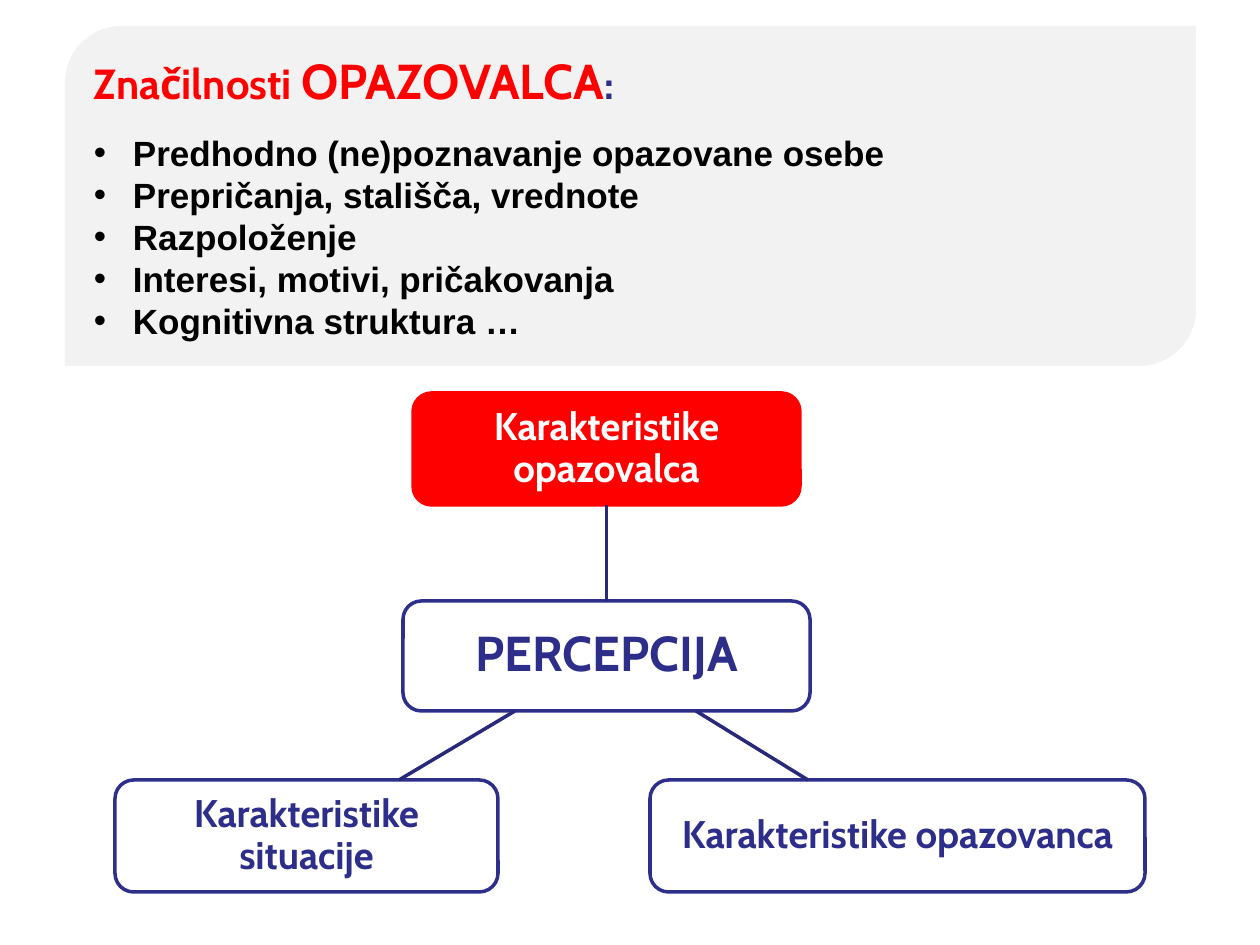
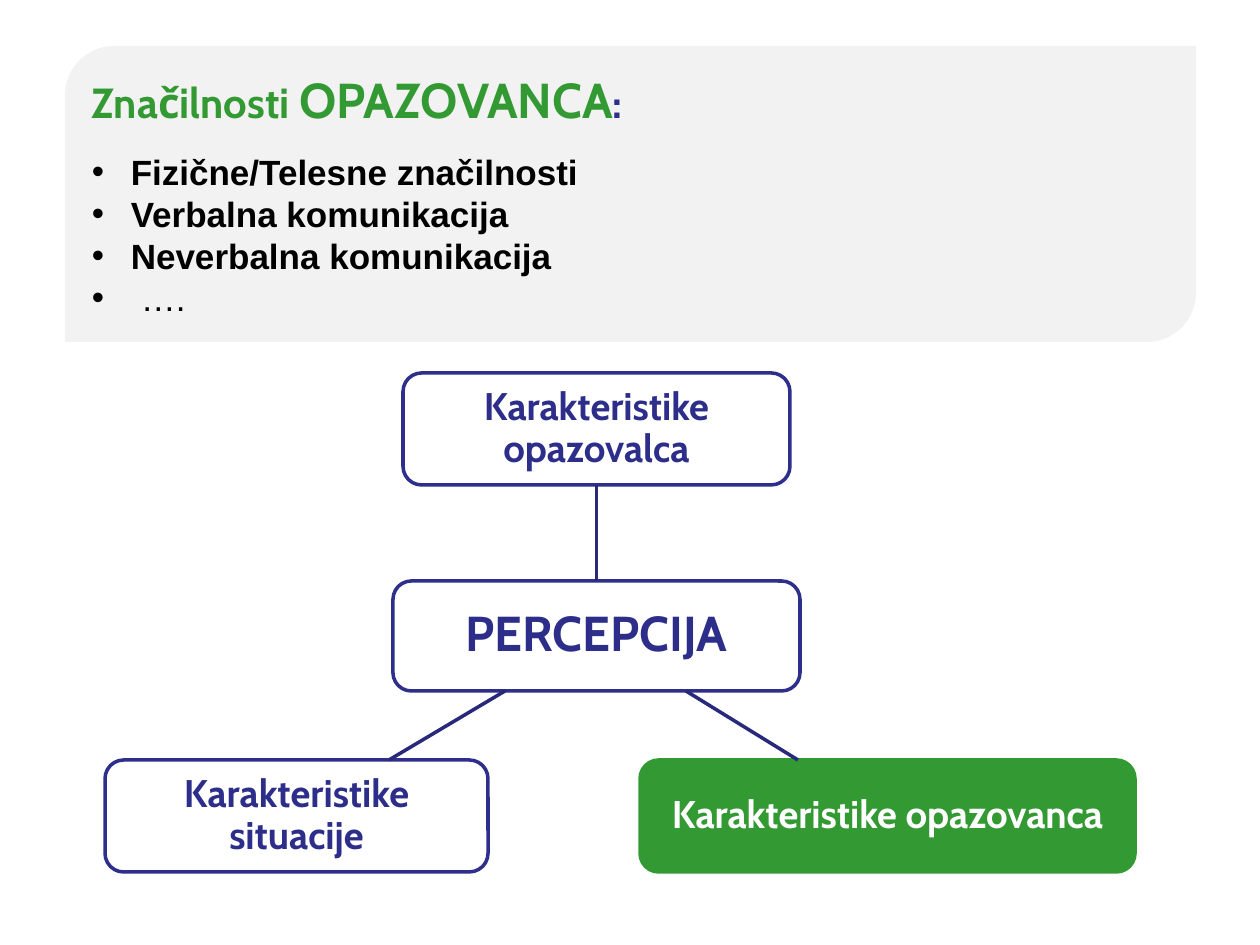
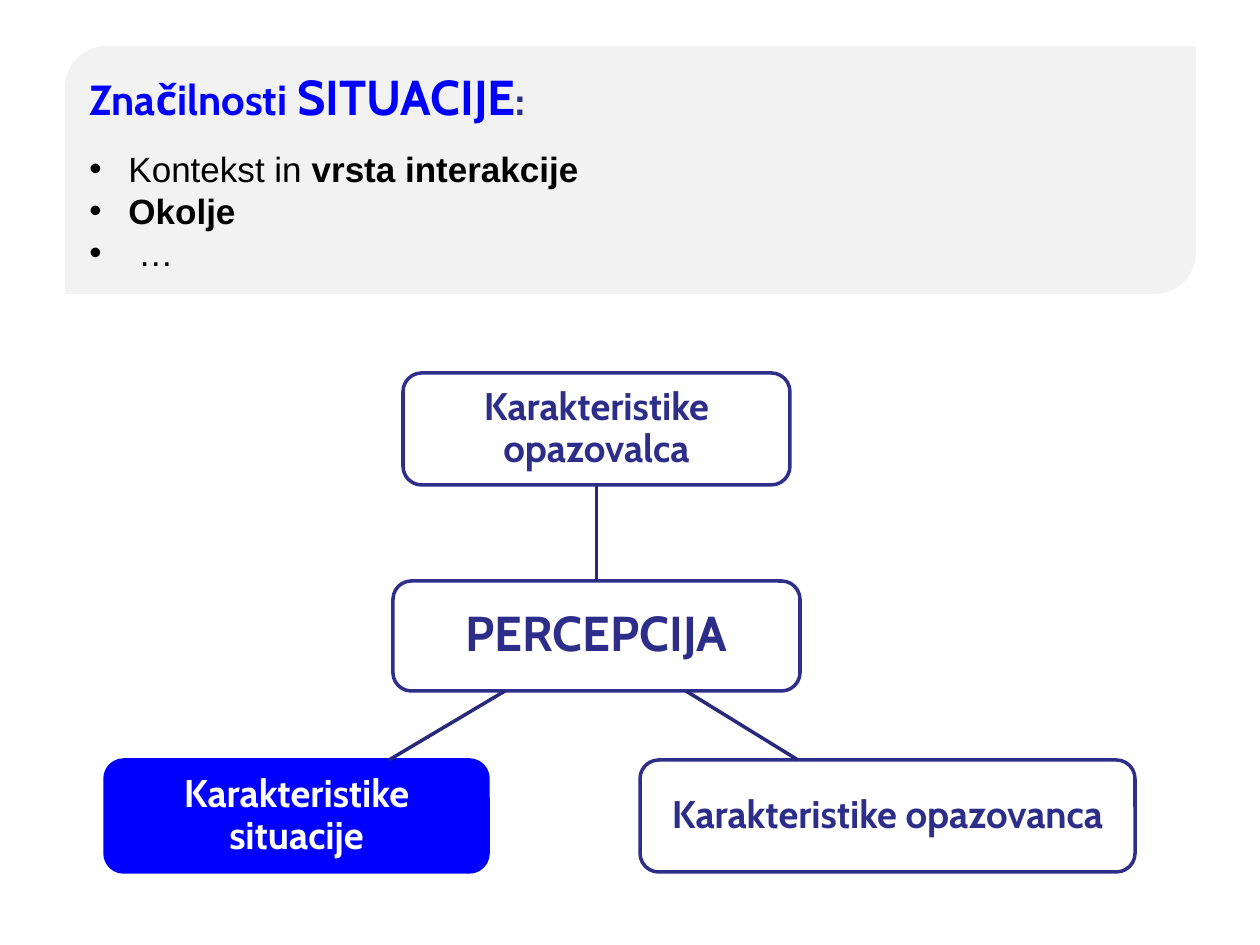
"""Builds three slides on the factors that shape perception."""
from lxml import etree
from pptx import Presentation
from pptx.dml.color import RGBColor
from pptx.enum.shapes import MSO_CONNECTOR, MSO_SHAPE
from pptx.enum.text import MSO_ANCHOR, PP_ALIGN
from pptx.oxml.ns import qn
from pptx.util import Pt

EMU_PER_PX = 914400 / 126
STRAIGHT = MSO_CONNECTOR.STRAIGHT
ROUNDED = MSO_SHAPE.ROUNDED_RECTANGLE
DIAGONAL_ROUNDED = MSO_SHAPE.ROUND_2_DIAG_RECTANGLE
MIDDLE = MSO_ANCHOR.MIDDLE
LEFT, CENTER = PP_ALIGN.LEFT, PP_ALIGN.CENTER
TOP_SITE, BOTTOM_SITE = 0, 2

WHITE, BLACK, GRAY = "FFFFFF", "000000", "F2F2F2"
NAVY, BORDER, LINK = "2D2D8A", "2E2E8B", "29297B"
RED, GREEN, BLUE = "FF0000", "339933", "0000FF"

NODES = {
    "perception": ("PERCEPCIJA", (403, 601, 407, 110), 28),
    "observer": ("Karakteristike opazovalca", (413, 393, 387, 112), 22),
    "observed": ("Karakteristike opazovanca", (650, 780, 495, 112), 22),
    "situation": ("Karakteristike situacije", (115, 780, 383, 112), 22),
}
SLANTED_LINKS = [(696, 711, 808, 780), (515, 711, 399, 780)]

BULLET_INDENT, ELLIPSIS_INDENT = 39, 49

SLIDES = [
    dict(subject="OPAZOVALCA", accent=RED, active="observer", top=26, height=340, shift=(0, 0),
         bullets=[[("Predhodno (ne)poznavanje opazovane osebe", True)],
                  [("Prepričanja, stališča, vrednote", True)],
                  [("Razpoloženje", True)],
                  [("Interesi, motivi, pričakovanja", True)],
                  [("Kognitivna struktura …", True)]]),
    dict(subject="OPAZOVANCA", accent=GREEN, active="observed", top=46, height=296, shift=(-10, -20),
         bullets=[[("Fizične/Telesne značilnosti", True)],
                  [("Verbalna komunikacija", True)],
                  [("Neverbalna komunikacija", True)],
                  [("….", False)]]),
    dict(subject="SITUACIJE", accent=BLUE, active="situation", top=46, height=248, shift=(-10, -20),
         bullets=[[("Kontekst in ", False), ("vrsta interakcije", True)],
                  [("Okolje", True)],
                  [("…", False)]]),
]


def px(length):
    """Turn px into EMU."""
    return round(length * EMU_PER_PX)


def color(value):
    """Turn a hex string into a colour."""
    return RGBColor.from_string(value)


def assign(target, **values):
    """Set attributes from format values."""
    for name, value in values.items():
        setattr(target, name, value)


class Deck:
    """Holds the style and the current slide."""

    def __init__(self):
        """Start an empty presentation."""
        self.presentation = Presentation()
        assign(self.presentation, slide_width=px(1260), slide_height=px(945))
        self.slide = None

    def new_slide(self):
        """Add a blank slide and make it current."""
        self.slide = self.presentation.slides.add_slide(self.presentation.slide_layouts[6])

    def shape(self, kind, box, fill, border=None):
        """Add a flat shape."""
        shape = self.slide.shapes.add_shape(kind, *map(px, box))
        shape.shadow.inherit = False
        shape.fill.solid()
        shape.fill.fore_color.rgb = color(fill)
        if border:
            shape.line.color.rgb = color(border)
            shape.line.width = Pt(2)
        else:
            shape.line.fill.background()
        assign(shape.text_frame, word_wrap=True, vertical_anchor=MIDDLE)
        return shape

    def run(self, paragraph, text, size, hue, font="Cabin", bold=True):
        """Add a formatted run."""
        run = paragraph.add_run()
        run.text = text
        assign(run.font, name=font, size=Pt(size), bold=bold)
        run.font.color.rgb = color(hue)

    def node(self, text, box, size, accent=None):
        """Add a diagram box, filled when it has an accent."""
        shape = self.shape(ROUNDED, box, accent or WHITE, accent or BORDER)
        assign(shape.text_frame, margin_left=px(14), margin_right=px(14))
        paragraph = shape.text_frame.paragraphs[0]
        assign(paragraph, alignment=CENTER, line_spacing=0.9)
        self.run(paragraph, text, size, WHITE if accent else NAVY)
        return shape

    def link(self, points):
        """Add a plain connecting line."""
        connector = self.slide.shapes.add_connector(STRAIGHT, *map(px, points))
        connector.line.color.rgb = color(LINK)
        connector.line.width = Pt(2)
        etree.SubElement(connector._element.spPr, qn("a:effectLst"))
        return connector

    def bullet(self, text_frame, parts):
        """Add a bulleted paragraph."""
        paragraph = text_frame.add_paragraph()
        paragraph.alignment = LEFT
        indent = ELLIPSIS_INDENT if parts[0][0].startswith("…") else BULLET_INDENT
        properties = paragraph._p.get_or_add_pPr()
        properties.set("marL", str(px(indent)))
        properties.set("indent", str(-px(indent)))
        etree.SubElement(properties, qn("a:buFont"), typeface="Arial")
        etree.SubElement(properties, qn("a:buChar"), char="•")
        for text, bold in parts:
            self.run(paragraph, text, 20, BLACK, "Arial", bold)
        return paragraph

    def panel(self, top, height, subject, accent, bullets):
        """Add the gray panel with its heading and bullets."""
        text_frame = self.shape(DIAGONAL_ROUNDED, (65, top, 1131, height), GRAY).text_frame
        heading = text_frame.paragraphs[0]
        heading.alignment = LEFT
        self.run(heading, "Značilnosti ", 24, accent)
        self.run(heading, subject, 28, accent)
        self.run(heading, ":", 24, NAVY)
        paragraphs = [self.bullet(text_frame, parts) for parts in bullets]
        paragraphs[0].space_before = Pt(12.5)

    def diagram(self, shift, active, accent):
        """Add the perception diagram with one box highlighted."""
        right, down = shift
        nodes = {}
        for name, (text, (left, top, width, height), size) in NODES.items():
            box = (left + right, top + down, width, height)
            nodes[name] = self.node(text, box, size, accent if name == active else None)
        upright = self.link((0, 0, 0, 0))
        upright.begin_connect(nodes["perception"], TOP_SITE)
        upright.end_connect(nodes["observer"], BOTTOM_SITE)
        for x1, y1, x2, y2 in SLANTED_LINKS:
            self.link((x1 + right, y1 + down, x2 + right, y2 + down))


def main():
    """Build and save the slides."""
    deck = Deck()
    for content in SLIDES:
        deck.new_slide()
        deck.diagram(content["shift"], content["active"], content["accent"])
        deck.panel(content["top"], content["height"], content["subject"],
                   content["accent"], content["bullets"])
    deck.presentation.save("out.pptx")


if __name__ == "__main__":
    main()
